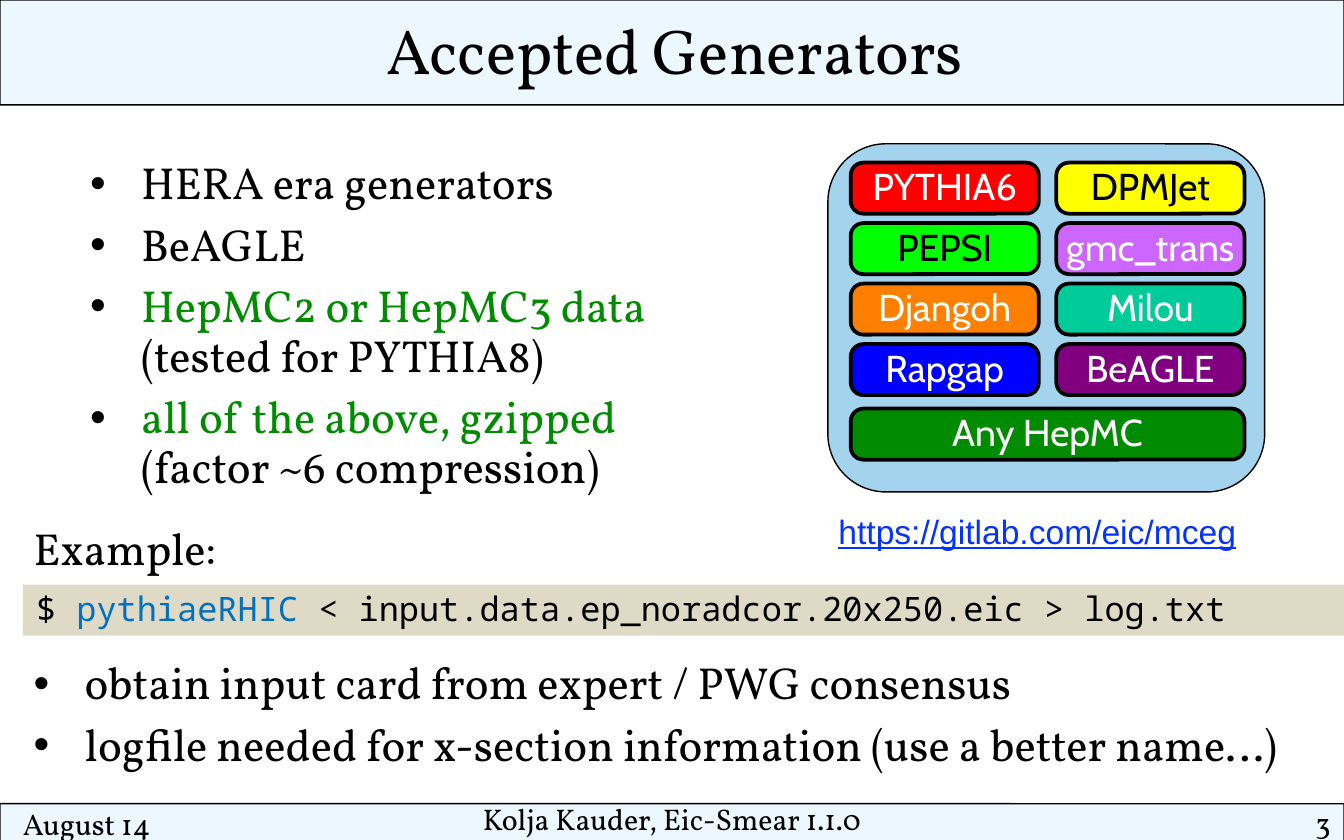
"""Build the Accepted Generators slide."""
import lxml.etree
import pptx
import pptx.dml.color
import pptx.enum.shapes
import pptx.enum.text
import pptx.oxml.ns
import pptx.util

RGB = pptx.dml.color.RGBColor
SHAPE = pptx.enum.shapes.MSO_SHAPE
ALIGN = pptx.enum.text.PP_ALIGN
ANCHOR = pptx.enum.text.MSO_ANCHOR

EMU_PER_PX = 9144
BLACK = RGB(0x00, 0x00, 0x00)
WHITE = RGB(0xFF, 0xFF, 0xFF)
BAND = RGB(0xED, 0xF7, 0xFF)
PANEL = RGB(0xA4, 0xD3, 0xEE)
CODE_BAR = RGB(0xDE, 0xDA, 0xC5)
GREEN = RGB(0x00, 0x8B, 0x00)
COMMAND = RGB(0x00, 0x70, 0xC0)
LINK = RGB(0x04, 0x32, 0xFF)
RED = RGB(0xFF, 0x00, 0x00)
YELLOW = RGB(0xFF, 0xFF, 0x00)
LIME = RGB(0x00, 0xFF, 0x00)
VIOLET = RGB(0xCC, 0x66, 0xFF)
ORANGE = RGB(0xFF, 0x80, 0x00)
TEAL = RGB(0x00, 0xCC, 0x99)
BLUE = RGB(0x00, 0x00, 0xFF)
PURPLE = RGB(0x80, 0x00, 0x80)

SERIF, SANS, MONO, LINK_FONT = "Vollkorn", "Cabin", "Noto Sans Mono", "Arial"
BODY_INSETS = (8, 4, 8, 4)
GENERATORS = [
    [("PYTHIA6", RED, WHITE), ("DPMJet", YELLOW, BLACK)],
    [("PEPSI", LIME, BLACK), ("gmc_trans", VIOLET, WHITE)],
    [("Djangoh", ORANGE, WHITE), ("Milou", TEAL, WHITE)],
    [("Rapgap", BLUE, WHITE), ("BeAGLE", PURPLE, WHITE)],
]


def px(n):
    """Turn px into EMU."""
    return pptx.util.Emu(n * EMU_PER_PX)


def set_frame(sp, insets, wrap=True, anchor=ANCHOR.TOP):
    """Set the margins, wrapping and anchor of a shape's text."""
    tf = sp.text_frame
    tf.word_wrap = wrap
    tf.vertical_anchor = anchor
    tf.margin_left, tf.margin_top, tf.margin_right, tf.margin_bottom = map(px, insets)
    return tf


def add_run(p, text, font, size, color=BLACK, underline=None):
    """Add one formatted run."""
    r = p.add_run()
    r.text = text
    r.font.name = font
    r.font.size = pptx.util.Pt(size)
    r.font.color.rgb = color
    r.font.underline = underline


def add_box(s, box, fill, line_width=0, kind=SHAPE.ROUNDED_RECTANGLE, radius=None):
    """Add a filled shape, outlined in black when a line width is given."""
    sp = s.shapes.add_shape(kind, *map(px, box))
    sp.shadow.inherit = False
    sp.fill.solid()
    sp.fill.fore_color.rgb = fill
    if line_width:
        sp.line.color.rgb = BLACK
        sp.line.width = pptx.util.Pt(line_width)
    else:
        sp.line.fill.background()
    if radius is not None:
        sp.adjustments[0] = radius
    return sp


def add_badge(s, box, label, fill, color):
    """Add a rounded generator badge."""
    sp = add_box(s, box, fill, 2, radius=0.25)
    p = set_frame(sp, (0, 0, 0, 0), anchor=ANCHOR.MIDDLE).paragraphs[0]
    p.alignment = ALIGN.CENTER
    p.line_spacing = 0.93
    add_run(p, label, SANS, 20, color)


def add_line(s, box, text, size, align=ALIGN.LEFT, spacing=0.93, insets=(0, 0, 0, 0),
             font=SERIF, color=BLACK, underline=None, wrap=True):
    """Add a text box holding one line."""
    sp = s.shapes.add_textbox(*map(px, box))
    p = set_frame(sp, insets, wrap).paragraphs[0]
    p.alignment = align
    p.line_spacing = spacing
    add_run(p, text, font, size, color, underline)


def add_bullet(p):
    """Give a paragraph a hanging black bullet."""
    pPr = p._p.get_or_add_pPr()
    pPr.set("marL", str(px(38)))
    pPr.set("indent", str(px(-38)))
    qn = pptx.oxml.ns.qn
    color = lxml.etree.SubElement(pPr, qn("a:buClr"))
    lxml.etree.SubElement(color, qn("a:srgbClr"), val=str(BLACK))
    lxml.etree.SubElement(pPr, qn("a:buFont"), typeface="Arial")
    lxml.etree.SubElement(pPr, qn("a:buChar"), char="•")


def add_bullets(s, box, items):
    """Add a bulleted list whose items are lists of (text, colour) lines."""
    sp = s.shapes.add_textbox(*map(px, box))
    tf = set_frame(sp, BODY_INSETS)
    for i, lines in enumerate(items):
        p = tf.add_paragraph() if i else tf.paragraphs[0]
        add_bullet(p)
        p.line_spacing = 0.93
        p.space_after = pptx.util.Pt(6)
        for j, (text, color) in enumerate(lines):
            if j:
                p.add_line_break()
            add_run(p, text, SERIF, 24, color)


def add_command(s, box, parts):
    """Add a shaded bar with a shell command."""
    sp = add_box(s, box, CODE_BAR, kind=SHAPE.RECTANGLE)
    p = set_frame(sp, (10, 5, 10, 5)).paragraphs[0]
    p.alignment = ALIGN.LEFT
    p.line_spacing = 0.93
    for text, color in parts:
        add_run(p, text, MONO, 18, color)


def add_generators(s):
    """Add the panel with its grid of generator badges."""
    add_box(s, (616, 107, 325, 259), PANEL, 0.75)
    for row, badges in enumerate(GENERATORS):
        for col, (label, fill, color) in enumerate(badges):
            add_badge(s, (633 + 153 * col, 121 + 45 * row, 140, 38), label, fill, color)
    add_badge(s, (633, 304, 293, 38), "Any HepMC", GREEN, WHITE)


def main():
    """Build and save the slide."""
    prs = pptx.Presentation()
    prs.slide_width, prs.slide_height = px(1000), px(625)
    s = prs.slides.add_slide(prs.slide_layouts[6])
    add_box(s, (0, 598, 1000, 28), BAND, 0.75, radius=0.005)
    add_box(s, (0, 0, 1000, 78), BAND, 0.75, radius=0.002)
    add_line(s, (17, 596, 233, 43), "August 14", 16, spacing=1.12)
    add_line(s, (209, 598, 582, 43), "Kolja Kauder, Eic-Smear 1.1.0", 16, ALIGN.CENTER, 0.92)
    add_line(s, (757, 601, 233, 43), "3", 16, ALIGN.RIGHT, 0.92)
    add_line(s, (17, 6, 970, 58), "Accepted Generators", 34, ALIGN.CENTER, 0.92, (8, 8, 8, 4))
    add_bullets(s, (59, 115, 543, 259), [
        [("HERA era generators", BLACK)],
        [("BeAGLE", BLACK)],
        [("HepMC2 or HepMC3 data", GREEN), ("(tested for PYTHIA8)", BLACK)],
        [("all of the above, gzipped", GREEN), ("(factor ~6 compression)", BLACK)],
    ])
    add_generators(s)
    add_command(s, (17, 435, 983, 38), [
        ("$ ", BLACK),
        ("pythiaeRHIC", COMMAND),
        (" < input.data.ep_noradcor.20x250.eic > log.txt", BLACK),
    ])
    add_line(s, (17, 387, 543, 46), "Example:", 24, insets=BODY_INSETS)
    add_bullets(s, (17, 487, 965, 92), [
        [("obtain input card from expert / PWG consensus", BLACK)],
        [("logfile needed for x-section information (use a better name…)", BLACK)],
    ])
    add_line(s, (614, 378, 319, 38), "https://gitlab.com/eic/mceg", 18, insets=(10, 5, 10, 5),
             font=LINK_FONT, color=LINK, underline=True, wrap=False)
    prs.save("out.pptx")


if __name__ == "__main__":
    main()
